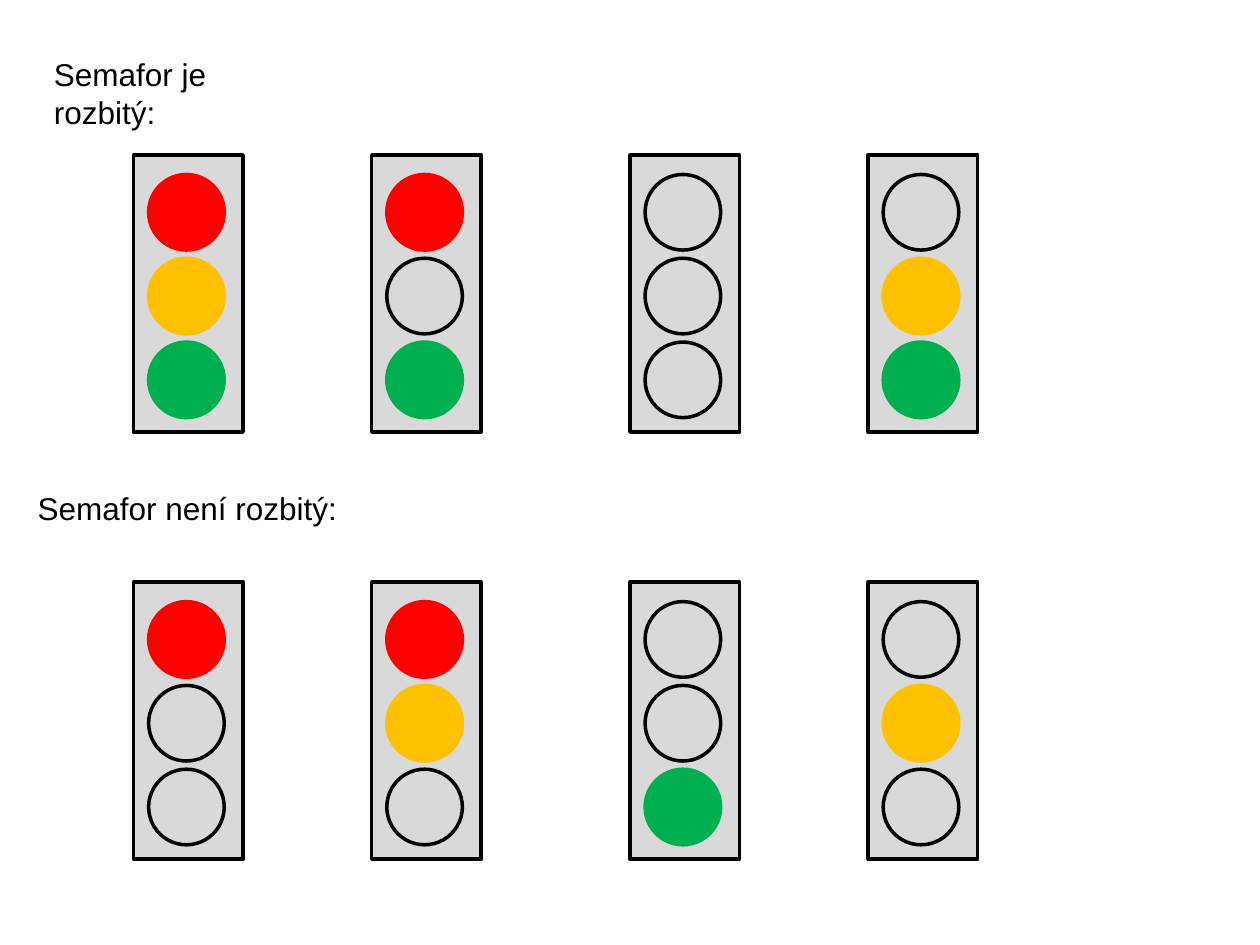
from dataclasses import dataclass
from typing import Optional

from pptx import Presentation
from pptx import util as u
from pptx.dml.color import RGBColor
from pptx.enum import shapes, text

BLACK = RGBColor(0x00, 0x00, 0x00)
GRAY = RGBColor(0xD9, 0xD9, 0xD9)
RED = RGBColor(0xFF, 0x00, 0x00)
AMBER = RGBColor(0xFF, 0xC0, 0x00)
GREEN = RGBColor(0x00, 0xB0, 0x50)

COLUMNS = (1.06, 2.95, 5.0, 6.89)
HOUSING_W, HOUSING_H = 0.87, 2.2
LAMP_SIZE, LAMP_PITCH = 0.6, 0.665
LAMP_DX, LAMP_DY = 0.12, 0.155
LAMPS = (("R", RED), ("A", AMBER), ("G", GREEN))


@dataclass(frozen=True)
class Row:
    title: str
    title_left: float
    title_top: float
    title_width: float
    lights_top: float
    lit: tuple[str, ...]


ROWS = (
    Row("Semafor je rozbitý:", 0.33, 0.39, 2.28, 1.23, ("RAG", "RG", "", "AG")),
    Row("Semafor není rozbitý:", 0.2, 3.83, 2.58, 4.62, ("R", "RA", "G", "A")),
)


def add_outlined(parent, kind, left: float, top: float, width: float, height: float,
                 fill: Optional[RGBColor], line: RGBColor) -> None:
    sp = parent.shapes.add_shape(kind, u.Inches(left), u.Inches(top),
                                 u.Inches(width), u.Inches(height))
    sp.shadow.inherit = False
    if fill is None:
        sp.fill.background()
    else:
        sp.fill.solid()
        sp.fill.fore_color.rgb = fill
    sp.line.color.rgb = line
    sp.line.width = u.Pt(2)


def add_traffic_light(s, left: float, top: float, lit: str) -> None:
    group = s.shapes.add_group_shape()
    add_outlined(group, shapes.MSO_SHAPE.RECTANGLE, left, top,
                 HOUSING_W, HOUSING_H, GRAY, BLACK)
    for i, (key, color) in enumerate(LAMPS):
        fill = color if key in lit else None
        add_outlined(group, shapes.MSO_SHAPE.OVAL, left + LAMP_DX,
                     top + LAMP_DY + i * LAMP_PITCH,
                     LAMP_SIZE, LAMP_SIZE, fill, fill or BLACK)


def add_title(s, row: Row) -> None:
    tf = s.shapes.add_textbox(u.Inches(row.title_left), u.Inches(row.title_top),
                              u.Inches(row.title_width), u.Inches(0.4)).text_frame
    tf.word_wrap = False
    tf.auto_size = text.MSO_AUTO_SIZE.SHAPE_TO_FIT_TEXT
    tf.text = row.title
    font = tf.paragraphs[0].runs[0].font
    font.name = "Arial"
    font.size = u.Pt(18)
    font.color.rgb = BLACK


def main() -> None:
    prs = Presentation()
    prs.slide_width, prs.slide_height = u.Inches(10), u.Inches(7.5)
    s = prs.slides.add_slide(prs.slide_layouts[6])
    for row in ROWS:
        add_title(s, row)
        for left, lit in zip(COLUMNS, row.lit):
            add_traffic_light(s, left, row.lights_top, lit)
    prs.save("out.pptx")


if __name__ == "__main__":
    main()
